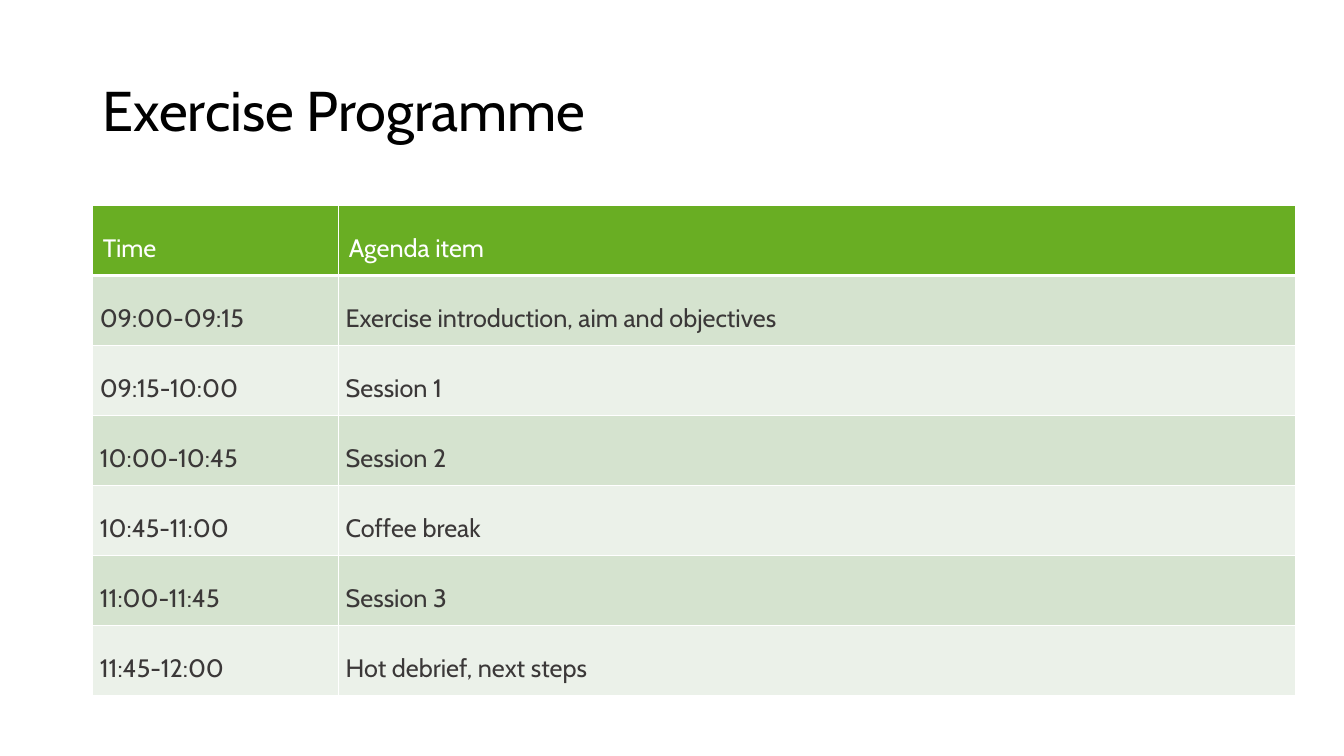
from dataclasses import dataclass

from lxml import etree
from pptx import Presentation
from pptx.dml.color import RGBColor
from pptx.enum.text import MSO_ANCHOR, MSO_AUTO_SIZE, PP_ALIGN
from pptx.oxml.ns import qn
from pptx.slide import Slide
from pptx.table import _Cell
from pptx.text.text import _Paragraph
from pptx.util import Pt

MIDDLE = MSO_ANCHOR.MIDDLE
LEFT = PP_ALIGN.LEFT
NO_AUTOFIT = MSO_AUTO_SIZE.NONE
TITLE_ONLY = 5


@dataclass(frozen=True)
class Theme:
    font: str = "Cabin"
    title_size: float = 40
    table_size: float = 18
    black: str = "000000"
    white: str = "FFFFFF"
    body_text: str = "3B3838"
    header_fill: str = "69AE23"
    bands: tuple[str, str] = ("D5E3CF", "EBF1E9")
    thin_rule: float = 1
    thick_rule: float = 3


@dataclass(frozen=True)
class AgendaEntry:
    time: str
    item: str


@dataclass(frozen=True)
class RowStyle:
    fill: str
    text: str
    top_rule: float
    bottom_rule: float
    side_inset: float
    edge_inset: float
    space_after: float


THEME = Theme()

HEADER = AgendaEntry("Time", "Agenda item")
AGENDA = [
    AgendaEntry("09:00-09:15", "Exercise introduction, aim and objectives"),
    AgendaEntry("09:15-10:00", "Session 1"),
    AgendaEntry("10:00-10:45", "Session 2"),
    AgendaEntry("10:45-11:00", "Coffee break"),
    AgendaEntry("11:00-11:45", "Session 3"),
    AgendaEntry("11:45-12:00", "Hot debrief, next steps"),
]

# Layout in points
SLIDE_WIDTH, SLIDE_HEIGHT = 960, 540
MARGIN_LEFT = 66.24
TITLE_TOP, TITLE_WIDTH, TITLE_HEIGHT = 28.8, 828, 104.4
TABLE_TOP, ROW_HEIGHT = 146.9, 50
COLUMN_WIDTHS = (175.7, 683.3)


def apply_format(target: object, values: dict[str, object]) -> None:
    for name, value in values.items():
        setattr(target, name, value)


def write_text(paragraph: _Paragraph, text: str, size: float, color: str,
               spacing: float, space_after: float = 0) -> None:
    apply_format(paragraph, {"alignment": LEFT, "line_spacing": spacing,
                             "space_before": Pt(0), "space_after": Pt(space_after)})
    run = paragraph.add_run()
    run.text = text
    apply_format(run.font, {"name": THEME.font, "size": Pt(size), "bold": False})
    run.font.color.rgb = RGBColor.from_string(color)


def add_borders(cell: _Cell, style: RowStyle) -> None:
    rules = {"a:lnL": THEME.thin_rule, "a:lnR": THEME.thin_rule,
             "a:lnT": style.top_rule, "a:lnB": style.bottom_rule}
    properties = cell._tc.get_or_add_tcPr()
    # Border lines come before the fill in the cell properties
    for position, (side, width) in enumerate(rules.items()):
        line = etree.Element(qn(side), w=str(int(Pt(width))))
        solid = etree.SubElement(line, qn("a:solidFill"))
        etree.SubElement(solid, qn("a:srgbClr"), val=THEME.white)
        properties.insert(position, line)


def draw_cell(cell: _Cell, text: str, style: RowStyle) -> None:
    apply_format(cell, {"vertical_anchor": MIDDLE,
                        "margin_left": Pt(style.side_inset),
                        "margin_right": Pt(style.side_inset),
                        "margin_top": Pt(style.edge_inset),
                        "margin_bottom": Pt(style.edge_inset)})
    cell.fill.solid()
    cell.fill.fore_color.rgb = RGBColor.from_string(style.fill)
    add_borders(cell, style)
    write_text(cell.text_frame.paragraphs[0], text, THEME.table_size,
               style.text, 1.5, style.space_after)


def row_style(index: int) -> RowStyle:
    if index == 0:
        return RowStyle(THEME.header_fill, THEME.white, THEME.thin_rule,
                        THEME.thick_rule, 7.2, 3.6, 0)
    top_rule = THEME.thick_rule if index == 1 else THEME.thin_rule
    return RowStyle(THEME.bands[(index - 1) % 2], THEME.body_text, top_rule,
                    THEME.thin_rule, 5.04, 0, 6)


def draw_title(slide: Slide, text: str) -> None:
    title = slide.shapes.title
    apply_format(title, {"left": Pt(MARGIN_LEFT), "top": Pt(TITLE_TOP),
                         "width": Pt(TITLE_WIDTH), "height": Pt(TITLE_HEIGHT)})
    apply_format(title.text_frame, {"vertical_anchor": MIDDLE, "word_wrap": True,
                                    "auto_size": NO_AUTOFIT})
    write_text(title.text_frame.paragraphs[0], text, THEME.title_size,
               THEME.black, 0.9)


def draw_agenda(slide: Slide, entries: list[AgendaEntry]) -> None:
    agenda = slide.shapes.add_table(
        len(entries), len(COLUMN_WIDTHS), Pt(MARGIN_LEFT), Pt(TABLE_TOP),
        Pt(sum(COLUMN_WIDTHS)), Pt(ROW_HEIGHT * len(entries))).table
    for column, width in zip(agenda.columns, COLUMN_WIDTHS):
        column.width = Pt(width)
    for index, (row, entry) in enumerate(zip(agenda.rows, entries)):
        row.height = Pt(ROW_HEIGHT)
        for cell, text in zip(row.cells, (entry.time, entry.item)):
            draw_cell(cell, text, row_style(index))


def main() -> None:
    deck = Presentation()
    apply_format(deck, {"slide_width": Pt(SLIDE_WIDTH),
                        "slide_height": Pt(SLIDE_HEIGHT)})
    slide = deck.slides.add_slide(deck.slide_layouts[TITLE_ONLY])
    draw_title(slide, "Exercise Programme")
    draw_agenda(slide, [HEADER, *AGENDA])
    deck.save("out.pptx")


if __name__ == "__main__":
    main()
